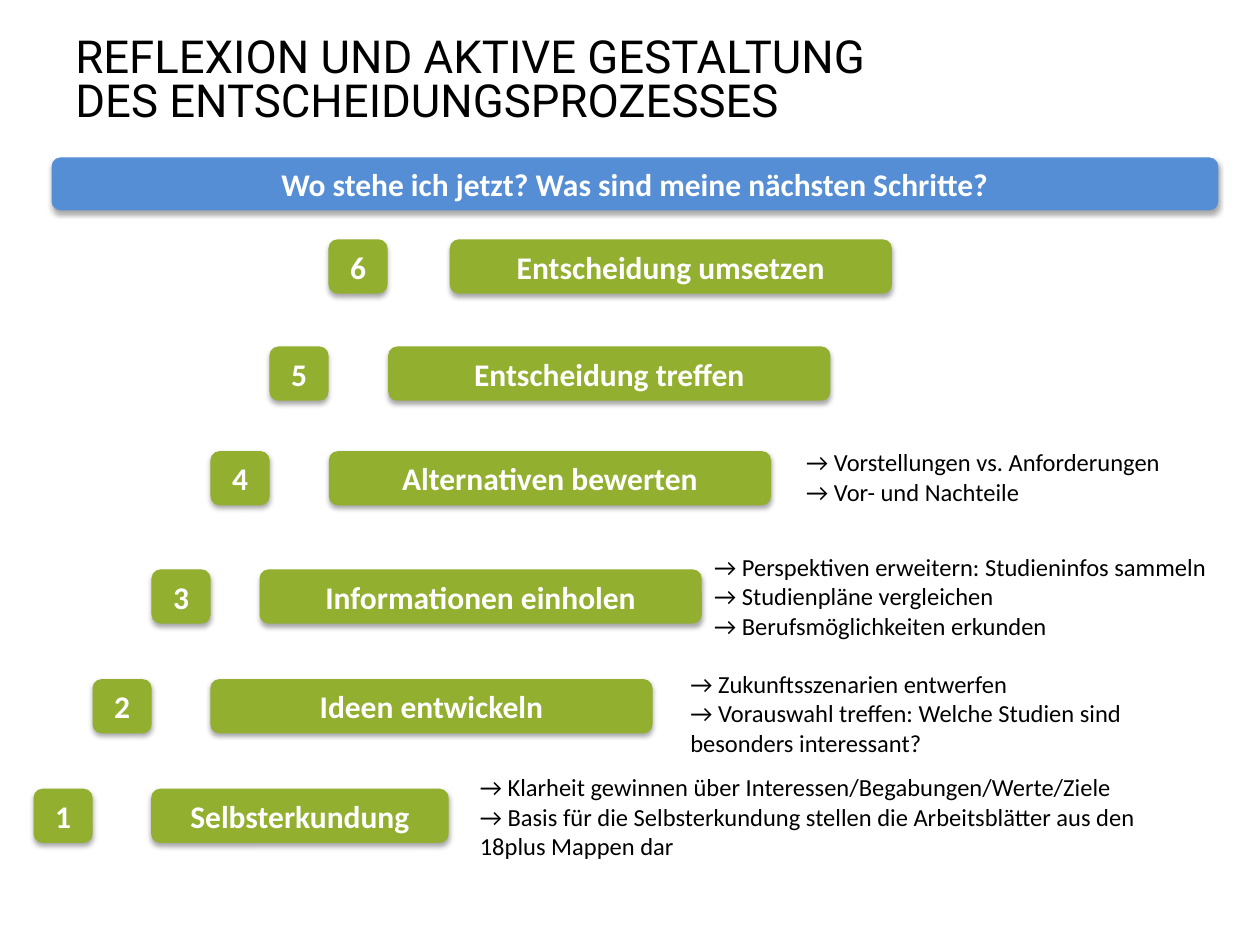
import pptx
import pptx.util
import pptx.dml.color
import pptx.enum.shapes
import pptx.enum.text
import pptx.oxml
import pptx.oxml.ns

Pt = pptx.util.Pt
RGBColor = pptx.dml.color.RGBColor

BLUE = RGBColor(0x55, 0x8E, 0xD5)
GREEN = RGBColor(0x92, 0xAF, 0x2F)
WHITE = RGBColor(0xFF, 0xFF, 0xFF)
BLACK = RGBColor(0x00, 0x00, 0x00)

SHADOW = (
    f'<a:effectLst {pptx.oxml.ns.nsdecls("a")}>'
    '<a:outerShdw blurRad="39370" dist="22860" dir="5400000" rotWithShape="0">'
    '<a:srgbClr val="000000"><a:alpha val="35000"/></a:srgbClr>'
    '</a:outerShdw></a:effectLst>'
)

presentation = pptx.Presentation()
presentation.slide_width = Pt(720)
presentation.slide_height = Pt(540)
slide = presentation.slides.add_slide(presentation.slide_layouts[6])


def add_bar(label, left, top, width, height, color):
    bar = slide.shapes.add_shape(
        pptx.enum.shapes.MSO_SHAPE.ROUNDED_RECTANGLE,
        Pt(left), Pt(top), Pt(width), Pt(height))
    bar.fill.solid()
    bar.fill.fore_color.rgb = color
    bar.line.fill.background()
    bar.element.spPr.append(pptx.oxml.parse_xml(SHADOW))
    frame = bar.text_frame
    frame.text = label
    frame.vertical_anchor = pptx.enum.text.MSO_ANCHOR.MIDDLE
    paragraph = frame.paragraphs[0]
    paragraph.alignment = pptx.enum.text.PP_ALIGN.CENTER
    font = paragraph.runs[0].font
    font.name, font.size, font.bold = "Calibri", Pt(18), True
    font.color.rgb = WHITE


def add_text(lines, left, top, width, height, font_name, size):
    frame = slide.shapes.add_textbox(
        Pt(left), Pt(top), Pt(width), Pt(height)).text_frame
    frame.word_wrap = True
    frame.text = "\n".join(lines)
    for paragraph in frame.paragraphs:
        for run in paragraph.runs:
            run.font.name, run.font.size = font_name, Pt(size)
            run.font.color.rgb = BLACK
    return frame


title = add_text(
    ["REFLEXION UND AKTIVE GESTALTUNG\vDES ENTSCHEIDUNGSPROZESSES"],
    36, 18.7, 648, 90, "Roboto", 26)
title.paragraphs[0].line_spacing = 0.8

add_bar("Wo stehe ich jetzt? Was sind meine nächsten Schritte?",
        29.5, 90, 666.7, 30.2, BLUE)

steps = [
    ("Selbsterkundung", 86.4, 450.7, 170),
    ("Ideen entwickeln", 120.2, 388.1, 252.7),
    ("Informationen einholen", 148.3, 325.4, 252.7),
    ("Alternativen bewerten", 187.9, 257.8, 252.7),
    ("Entscheidung treffen", 221.8, 198, 252.7),
    ("Entscheidung umsetzen", 257, 136.8, 252.7),
]
for index, (step, left, top, width) in enumerate(steps):
    add_bar(str(index + 1), 19.2 + 33.7 * index, top, 33.8, 31, GREEN)
    add_bar(step, left, top, width, 31, GREEN)

notes = [
    (["→ Klarheit gewinnen über Interessen/Begabungen/Werte/Ziele",
      "→ Basis für die Selbsterkundung stellen die Arbeitsblätter aus den 18plus Mappen dar"],
     267.1, 437.8, 415.4, 58.3),
    (["→ Zukunftsszenarien entwerfen",
      "→ Vorauswahl treffen: Welche Studien sind besonders interessant?"],
     387.4, 378.7, 290.9, 58.3),
    (["→ Perspektiven erweitern: Studieninfos sammeln",
      "→ Studienpläne vergleichen",
      "→ Berufsmöglichkeiten erkunden"],
     401, 311.8, 306, 58.3),
    (["→ Vorstellungen vs. Anforderungen",
      "→ Vor- und Nachteile"],
     453.6, 252, 241.9, 41),
]
for lines, left, top, width, height in notes:
    add_text(lines, left, top, width, height, "Calibri", 14)

presentation.save("out.pptx")
